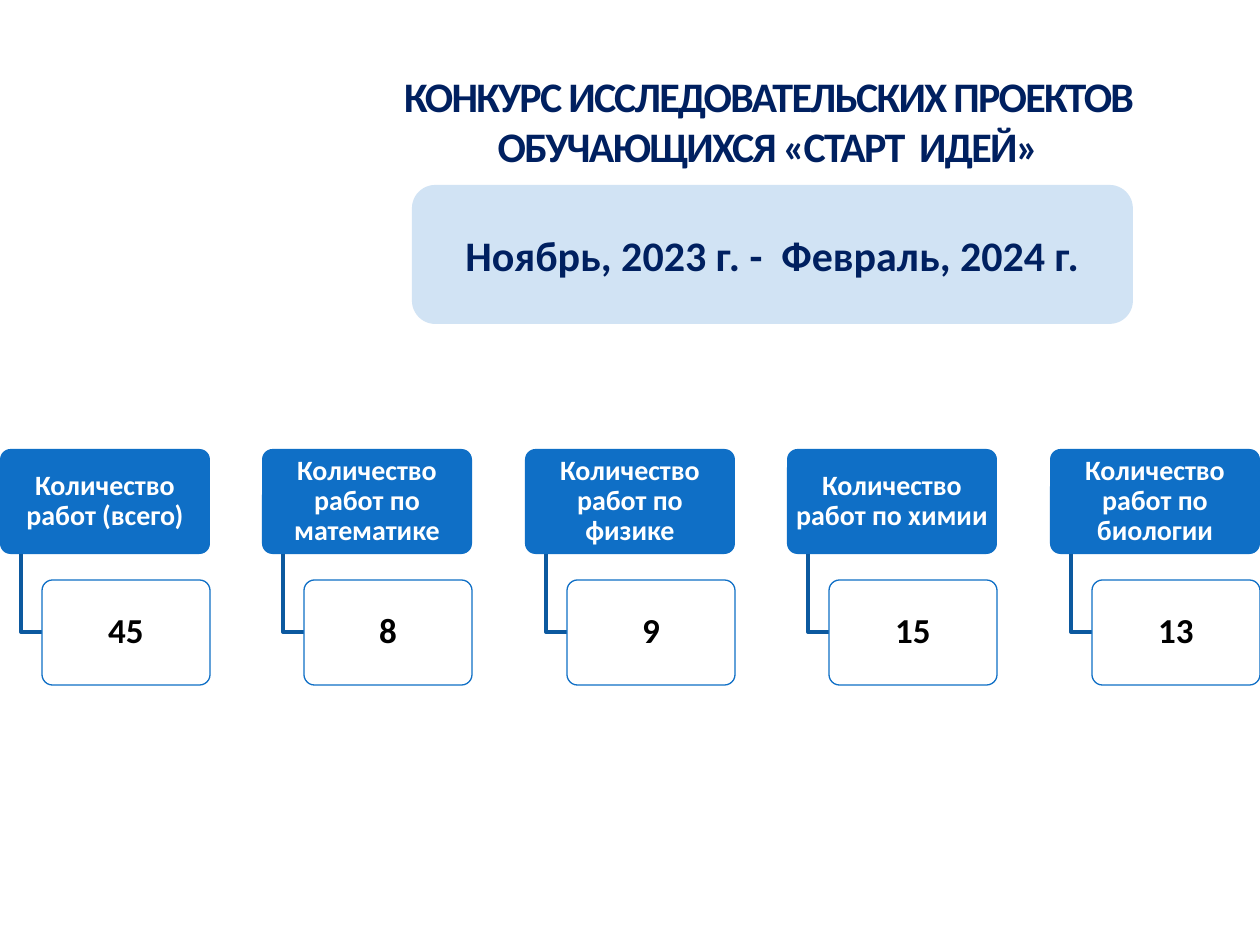
from dataclasses import dataclass

import pptx
import pptx.dml.color
import pptx.enum.shapes
import pptx.enum.text
import pptx.oxml.ns
import pptx.shapes.autoshape
import pptx.slide
import pptx.text.text
import pptx.util
from lxml import etree

EMU_PER_PX = 914400 / 126


@dataclass(frozen=True)
class Theme:
    font: str = "Calibri"
    navy: str = "002060"
    blue: str = "0F6FC6"
    branch: str = "0C599F"
    white: str = "FFFFFF"
    black: str = "000000"
    heading_pt: int = 24
    label_pt: int = 16
    count_pt: int = 20


@dataclass(frozen=True)
class Box:
    left: int
    top: int
    width: int
    height: int


@dataclass(frozen=True)
class Category:
    label: str
    count: str


THEME = Theme()
CATEGORIES = [
    Category("Количество работ (всего)", "45"),
    Category("Количество работ по математике", "8"),
    Category("Количество работ по физике", "9"),
    Category("Количество работ по химии", "15"),
    Category("Количество работ по биологии", "13"),
]
SLIDE_WIDTH, SLIDE_HEIGHT = 1260, 945
LABEL_WIDTH, LABEL_TOP = 210, 449
COUNT_WIDTH, COUNT_TOP = 168, 580
CARD_HEIGHT = 105
BRANCH_INDENT = 21


def px(length: int) -> pptx.util.Emu:
    return pptx.util.Emu(round(length * EMU_PER_PX))


def rgb(color: str) -> pptx.dml.color.RGBColor:
    return pptx.dml.color.RGBColor.from_string(color)


def write(frame: pptx.text.text.TextFrame, text: str, size: int, color: str,
          line_spacing: float = 1.0) -> pptx.text.text._Run:
    """Write one bold, centred paragraph."""
    frame.word_wrap = True
    frame.auto_size = pptx.enum.text.MSO_AUTO_SIZE.NONE
    frame.vertical_anchor = pptx.enum.text.MSO_ANCHOR.MIDDLE
    paragraph = frame.paragraphs[0]
    paragraph.alignment = pptx.enum.text.PP_ALIGN.CENTER
    paragraph.line_spacing = line_spacing
    run = paragraph.add_run()
    run.text = text
    run.font.name = THEME.font
    run.font.size = pptx.util.Pt(size)
    run.font.bold = True
    run.font.color.rgb = rgb(color)
    return run


def add_panel(slide: pptx.slide.Slide, box: Box, fill: str, opacity: int = 100,
              outline: str = "") -> pptx.shapes.autoshape.Shape:
    """Draw a rounded rectangle; opacity is in percent."""
    panel = slide.shapes.add_shape(
        pptx.enum.shapes.MSO_SHAPE.ROUNDED_RECTANGLE,
        px(box.left), px(box.top), px(box.width), px(box.height))
    panel.shadow.inherit = False
    panel.fill.solid()
    panel.fill.fore_color.rgb = rgb(fill)
    if opacity < 100:
        fill_color = panel._element.spPr.find(
            ".//" + pptx.oxml.ns.qn("a:srgbClr"))
        etree.SubElement(fill_color, pptx.oxml.ns.qn("a:alpha"),
                         val=str(opacity * 1000))
    if outline:
        panel.line.color.rgb = rgb(outline)
        panel.line.width = pptx.util.Pt(0.75)
    else:
        panel.line.fill.background()
    return panel


def fill_card(card: pptx.shapes.autoshape.Shape, text: str, size: int,
              color: str, side_inset: int, end_inset: int) -> None:
    card.adjustments[0] = 0.1
    frame = card.text_frame
    frame.margin_left = frame.margin_right = px(side_inset)
    frame.margin_top = frame.margin_bottom = px(end_inset)
    write(frame, text, size, color, line_spacing=0.9)


def add_branch(slide: pptx.slide.Slide, left: int, top: int, right: int,
               bottom: int) -> None:
    """Draw the elbow from a label down to its count."""
    outline = slide.shapes.build_freeform(left, top, scale=EMU_PER_PX)
    outline.add_line_segments([(left, bottom), (right, bottom)], close=False)
    branch = outline.convert_to_shape()
    branch.shadow.inherit = False
    branch.fill.background()
    branch.line.color.rgb = rgb(THEME.branch)
    branch.line.width = pptx.util.Pt(2)


def add_category(slide: pptx.slide.Slide, category: Category, left: int) -> None:
    label = add_panel(slide, Box(left, LABEL_TOP, LABEL_WIDTH, CARD_HEIGHT),
                      THEME.blue)
    fill_card(label, category.label, THEME.label_pt, THEME.white, 4, 3)
    count_left = left + LABEL_WIDTH - COUNT_WIDTH
    add_branch(slide, left + BRANCH_INDENT, LABEL_TOP + CARD_HEIGHT,
               count_left, COUNT_TOP + CARD_HEIGHT // 2)
    count = add_panel(slide, Box(count_left, COUNT_TOP, COUNT_WIDTH, CARD_HEIGHT),
                      THEME.white, opacity=90, outline=THEME.blue)
    fill_card(count, category.count, THEME.count_pt, THEME.black, 5, 3)


def main() -> None:
    presentation = pptx.Presentation()
    presentation.slide_width = px(SLIDE_WIDTH)
    presentation.slide_height = px(SLIDE_HEIGHT)
    slide = presentation.slides.add_slide(presentation.slide_layouts[5])

    # Contest title
    title = slide.shapes.title
    title.left, title.top = px(302), px(26)
    title.width, title.height = px(932), px(189)
    heading = write(
        title.text_frame,
        "КОНКУРС ИССЛЕДОВАТЕЛЬСКИХ ПРОЕКТОВ ОБУЧАЮЩИХСЯ «СТАРТ  ИДЕЙ»",
        THEME.heading_pt, THEME.navy)
    heading._r.get_or_add_rPr().set("spc", "-100")

    # Contest period
    period = add_panel(slide, Box(412, 185, 721, 139), THEME.blue, opacity=19)
    write(period.text_frame, "Ноябрь, 2023 г. -  Февраль, 2024 г.",
          THEME.heading_pt, THEME.navy)

    # Number of works by subject, spread over the slide width
    last = len(CATEGORIES) - 1
    for index, category in enumerate(CATEGORIES):
        add_category(slide, category, index * (SLIDE_WIDTH - LABEL_WIDTH) // last)

    presentation.save("out.pptx")


if __name__ == "__main__":
    main()
